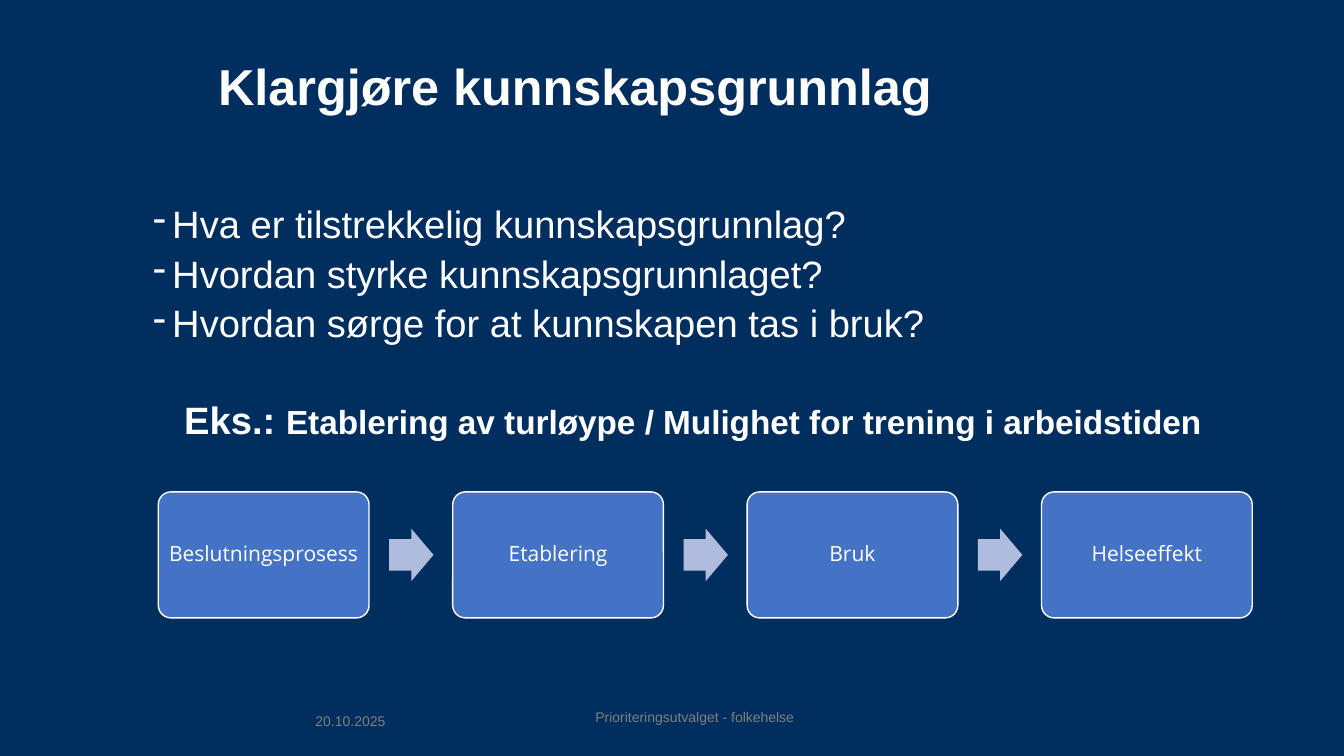
from dataclasses import dataclass

from lxml.etree import SubElement
from pptx import Presentation
from pptx.dml.color import RGBColor
from pptx.enum.shapes import MSO_SHAPE
from pptx.enum.text import MSO_ANCHOR, PP_ALIGN
from pptx.oxml.ns import qn
from pptx.util import Inches, Pt


@dataclass(frozen=True)
class Theme:
    background: str = "002E5E"
    text: str = "FFFFFF"
    muted: str = "808080"
    step: str = "4472C4"
    arrow: str = "B0BCDE"
    font: str = "Arial"
    step_font: str = "Open Sans"
    title_size: float = 36
    body_size: float = 27.2
    example_size: float = 23.8
    step_size: float = 15
    footer_size: float = 10


THEME = Theme()


def rgb(value):
    return RGBColor.from_string(value)


def add_span(para, text, *, size, color=THEME.text, font=THEME.font, bold=False):
    span = para.add_run()
    span.text = text
    span.font.size = Pt(size)
    span.font.color.rgb = rgb(color)
    span.font.name = font
    span.font.bold = bold


def add_text(page, box, text, *, align=PP_ALIGN.CENTER, **style):
    """Place one vertically centred line of text in the box."""
    frame = page.shapes.add_textbox(*map(Inches, box)).text_frame
    frame.word_wrap = True
    frame.vertical_anchor = MSO_ANCHOR.MIDDLE
    para = frame.paragraphs[0]
    para.alignment = align
    add_span(para, text, **style)


def add_block(page, preset, box, fill, adjustments):
    block = page.shapes.add_shape(preset, *map(Inches, box))
    for index, value in enumerate(adjustments):
        block.adjustments[index] = value
    block.shadow.inherit = False
    block.fill.solid()
    block.fill.fore_color.rgb = rgb(fill)
    block.line.fill.background()
    return block


def set_indent(para, left, hanging=0, bullet=None):
    props = para._p.get_or_add_pPr()
    props.set("marL", str(Inches(left)))
    props.set("indent", str(Inches(-hanging)))
    if bullet:
        SubElement(props, qn("a:buChar")).set("char", bullet)


def add_body(page, box, questions, label, example):
    frame = page.shapes.add_textbox(*map(Inches, box)).text_frame
    frame.word_wrap = True

    # Questions with dash bullets
    for index, question in enumerate(questions):
        para = frame.add_paragraph() if index else frame.paragraphs[0]
        para.line_spacing = 0.9
        para.space_before = Pt(6)
        set_indent(para, 0.69, hanging=0.19, bullet="-")
        add_span(para, question, size=THEME.body_size)

    # Centred example, one line further down
    para = frame.add_paragraph()
    para.alignment = PP_ALIGN.CENTER
    para.line_spacing = 0.9
    para.space_before = Pt(40)
    set_indent(para, 0.5)
    add_span(para, label, size=THEME.body_size, bold=True)
    add_span(para, example, size=THEME.example_size, bold=True)


def add_process(page, box, steps):
    left, top, width, height = box
    step_width, arrow_width, arrow_height = 2.09, 0.44, 0.52
    pitch = (width - step_width) / (len(steps) - 1)

    for index, step in enumerate(steps):
        # Step box
        x = left + index * pitch
        block = add_block(page, MSO_SHAPE.ROUNDED_RECTANGLE,
                          (x, top, step_width, height), THEME.step, [0.1])
        block.line.color.rgb = rgb(THEME.text)
        block.line.width = Pt(1)
        frame = block.text_frame
        frame.word_wrap = True
        frame.vertical_anchor = MSO_ANCHOR.MIDDLE
        frame.margin_left = frame.margin_right = Inches(0.05)
        para = frame.paragraphs[0]
        para.alignment = PP_ALIGN.CENTER
        para.line_spacing = 0.9
        add_span(para, step, size=THEME.step_size, font=THEME.step_font)

        # Arrow to the next step
        if index < len(steps) - 1:
            arrow_box = (x + step_width + 0.2, top + (height - arrow_height) / 2,
                         arrow_width, arrow_height)
            add_block(page, MSO_SHAPE.RIGHT_ARROW, arrow_box, THEME.arrow, [0.6, 0.5])


def add_footer(page, box, date, caption):
    left, top, width, height = box
    style = {"size": THEME.footer_size, "color": THEME.muted}
    add_text(page, (left, top + 0.04, 3, height), date, align=PP_ALIGN.RIGHT, **style)
    add_text(page, (left + 2.15, top, width - 2.15, height), caption, **style)


def main():
    deck = Presentation()
    deck.slide_width, deck.slide_height = Inches(13.33), Inches(7.5)
    page = deck.slides.add_slide(deck.slide_layouts[6])
    page.background.fill.solid()
    page.background.fill.fore_color.rgb = rgb(THEME.background)

    add_text(page, (1.46, 0.12, 8.49, 1.45), "Klargjøre kunnskapsgrunnlag",
             size=THEME.title_size, bold=True)
    add_body(page, (0.92, 1.99, 11.4, 2.65),
             ["Hva er tilstrekkelig kunnskapsgrunnlag?",
              "Hvordan styrke kunnskapsgrunnlaget?",
              "Hvordan sørge for at kunnskapen tas i bruk?"],
             "Eks.: ", "Etablering av turløype / Mulighet for trening i arbeidstiden")
    add_process(page, (1.57, 4.88, 10.85, 1.25),
                ["Beslutningsprosess", "Etablering", "Bruk", "Helseeffekt"])
    add_footer(page, (0.92, 6.91, 9.79, 0.4),
               "20.10.2025", "Prioriteringsutvalget - folkehelse")
    deck.save("out.pptx")


if __name__ == "__main__":
    main()
